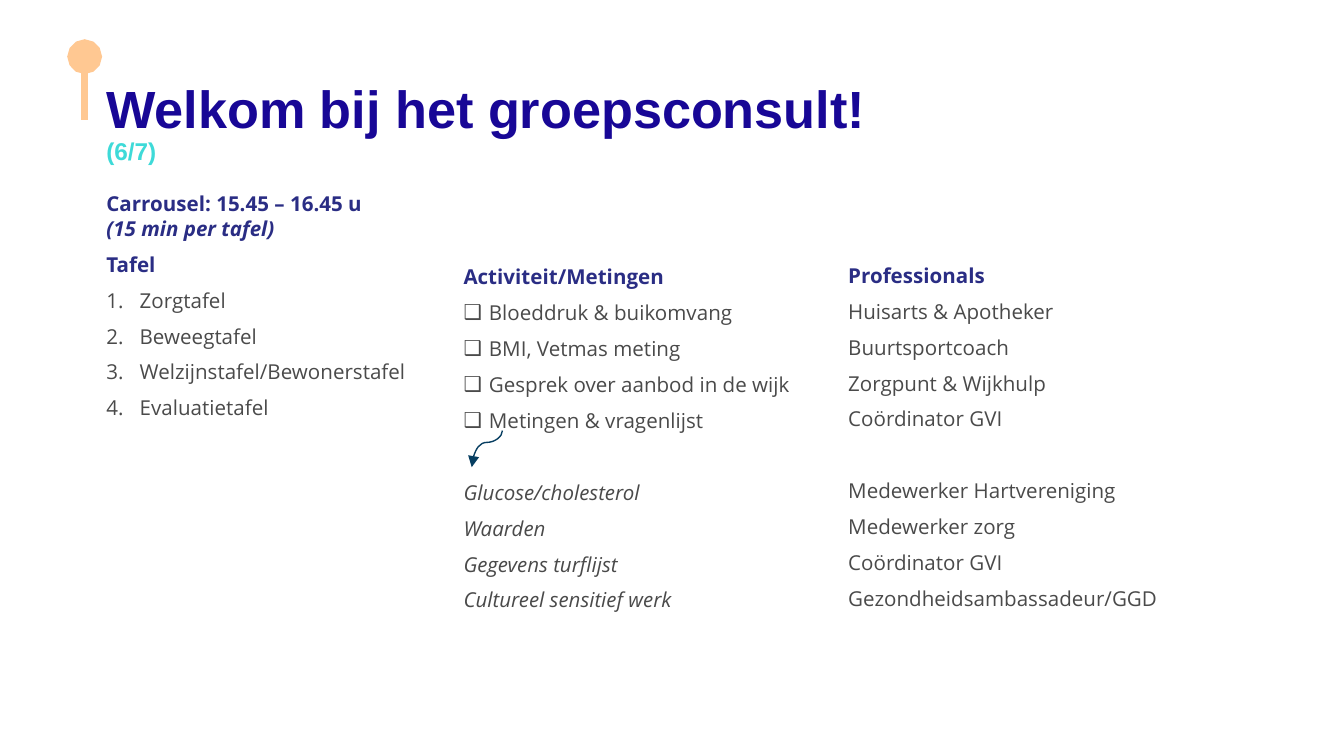
from lxml.etree import SubElement
from pptx import Presentation
from pptx.dml.color import RGBColor
from pptx.enum.shapes import MSO_CONNECTOR
from pptx.enum.text import MSO_ANCHOR, MSO_AUTO_SIZE, PP_ALIGN
from pptx.oxml.ns import qn
from pptx.util import Cm, Pt

HUES = {"title": "180796", "count": "3EDAD8", "head": "2A2D84",
        "body": "4A4A4A", "pin": "FFC892", "arrow": "073E61"}

BODY = {"name": "Open Sans", "size": Pt(11), "bold": False, "italic": False}
FONTS = {
    "title": {"name": "Arial", "size": Pt(28), "bold": True},
    "count": {"name": "Arial", "size": Pt(13), "bold": True},
    "head": {**BODY, "bold": True},
    "time": {**BODY, "bold": True, "italic": True},
    "body": BODY,
    "note": {**BODY, "italic": True},
}
TINTS = {"time": "head", "note": "body"}

TITLE = [("Welkom bij het groepsconsult!", "title"), ("(6/7)", "count")]

# Each group: text style, bullet kind, lines
TABLES = [
    ("head", None, ["Tafel"]),
    ("body", "number", ["Zorgtafel", "Beweegtafel",
                        "Welzijnstafel/Bewonerstafel", "Evaluatietafel"]),
]
TASKS = [
    ("head", None, ["Activiteit/Metingen"]),
    ("body", "box", ["Bloeddruk & buikomvang", "BMI, Vetmas meting",
                     "Gesprek over aanbod in de wijk", "Metingen & vragenlijst"]),
    ("note", None, ["Glucose/cholesterol", "Waarden", "Gegevens turflijst",
                    "Cultureel sensitief werk"]),
]
STAFF = [
    ("head", None, ["Professionals"]),
    ("body", None, ["Huisarts & Apotheker", "Buurtsportcoach",
                    "Zorgpunt & Wijkhulp", "Coördinator GVI"]),
    ("body", None, ["Medewerker Hartvereniging", "Medewerker zorg",
                    "Coördinator GVI", "Gezondheidsambassadeur/GGD"]),
]
INTRO = [("Carrousel: 15.45 – 16.45 u", "head"), ("(15 min per tafel)", "time")]

LINE, GAP = Pt(13.2), Pt(6)
ROW = LINE + GAP
TOP, TALL = Cm(3.61), Cm(8.99)
# Placeholder index, left, top, width, opening runs, groups
COLUMNS = [
    (1, Cm(2.01), TOP, Cm(6.5), INTRO, TABLES),
    (2, Cm(8.76), TOP + 2 * ROW + Cm(0.03), Cm(6.27), None, TASKS),
    (3, Cm(16.03), TOP + 2 * ROW, Cm(6.27), None, STAFF),
]
BULLETS = {
    "number": ("a:buAutoNum", {"type": "arabicPeriod"}, Cm(0.63)),
    "box": ("a:buChar", {"char": "❑"}, Cm(0.48)),
}


def apply(thing, values):
    for key, value in values.items():
        setattr(thing, key, value)


def place(shape, left, top, width, height):
    apply(shape, {"left": left, "top": top, "width": width, "height": height})
    frame = shape.text_frame
    apply(frame, {"margin_left": 0, "margin_right": 0, "margin_top": 0,
                  "margin_bottom": 0, "word_wrap": True,
                  "auto_size": MSO_AUTO_SIZE.NONE,
                  "vertical_anchor": MSO_ANCHOR.TOP})
    return frame


def write(para, runs):
    """Put each run on a line of its own within one paragraph."""
    for spot, (text, style) in enumerate(runs):
        if spot:
            para.add_line_break()
        run = para.add_run()
        run.text = text
        apply(run.font, FONTS[style])
        run.font.color.rgb = RGBColor.from_string(HUES[TINTS.get(style, style)])


def mark(para, kind):
    """Set the bullet and hanging indent, or clear both."""
    props = para._p.get_or_add_pPr()
    tag, values, indent = BULLETS.get(kind, ("a:buNone", {}, 0))
    props.set("marL", str(indent))
    props.set("indent", str(-indent))
    if kind:
        tint = SubElement(props, qn("a:buClr"))
        SubElement(tint, qn("a:srgbClr"), val=HUES["body"])
    SubElement(props, qn(tag), **values)


def fill(frame, intro, groups):
    rows = [(intro, None, 0)] if intro else []
    for style, kind, lines in groups:
        for spot, text in enumerate(lines):
            # A group after the first list stands one row lower
            extra = ROW if groups.index((style, kind, lines)) > 1 and not spot else 0
            rows.append(([(text, style)], kind, GAP + extra if rows else 0))
    for spot, (runs, kind, before) in enumerate(rows):
        para = frame.add_paragraph() if spot else frame.paragraphs[0]
        mark(para, kind)
        apply(para, {"line_spacing": LINE, "space_before": before,
                     "space_after": 0, "alignment": PP_ALIGN.LEFT})
        write(para, runs)


def link(slide, kind, ends, hue, width, tip):
    line = slide.shapes.add_connector(kind, *(Cm(n) for n in ends))
    line.line.color.rgb = RGBColor.from_string(HUES[hue])
    line.line.width = Pt(width)
    shape, size = tip
    SubElement(line.line._get_or_add_ln(), qn("a:tailEnd"),
               type=shape, w=size, len=size)
    SubElement(line._element.spPr, qn("a:effectLst"))
    return line


def main():
    deck = Presentation()
    apply(deck, {"slide_width": Cm(25.4), "slide_height": Cm(14.28)})
    slide = deck.slides.add_slide(deck.slide_layouts[4])
    slots = {slot.placeholder_format.idx: slot for slot in slide.placeholders}

    frame = place(slots[0], Cm(2.01), Cm(1.57), Cm(19), Cm(2.04))
    para = frame.paragraphs[0]
    apply(para, {"alignment": PP_ALIGN.LEFT, "line_spacing": 0.9})
    write(para, TITLE)

    for index, left, top, width, intro, groups in COLUMNS:
        frame = place(slots[index], left, top, width, TOP + TALL - top)
        fill(frame, intro, groups)
    spare = slots[4]._element
    spare.getparent().remove(spare)

    link(slide, MSO_CONNECTOR.STRAIGHT, (1.6, 2.26, 1.6, 1.07),
         "pin", 3.75, ("oval", "lg"))
    curve = link(slide, MSO_CONNECTOR.CURVE, (8.86, 8.19, 9.55, 8.77),
                 "arrow", 0.75, ("triangle", "med"))
    props = curve._element.spPr
    props.find(qn("a:xfrm")).set("rot", str(90 * 60000))
    guides = props.find(qn("a:prstGeom")).find(qn("a:avLst"))
    SubElement(guides, qn("a:gd"), name="adj1", fmla="val 32300")

    deck.save("out.pptx")


if __name__ == "__main__":
    main()
